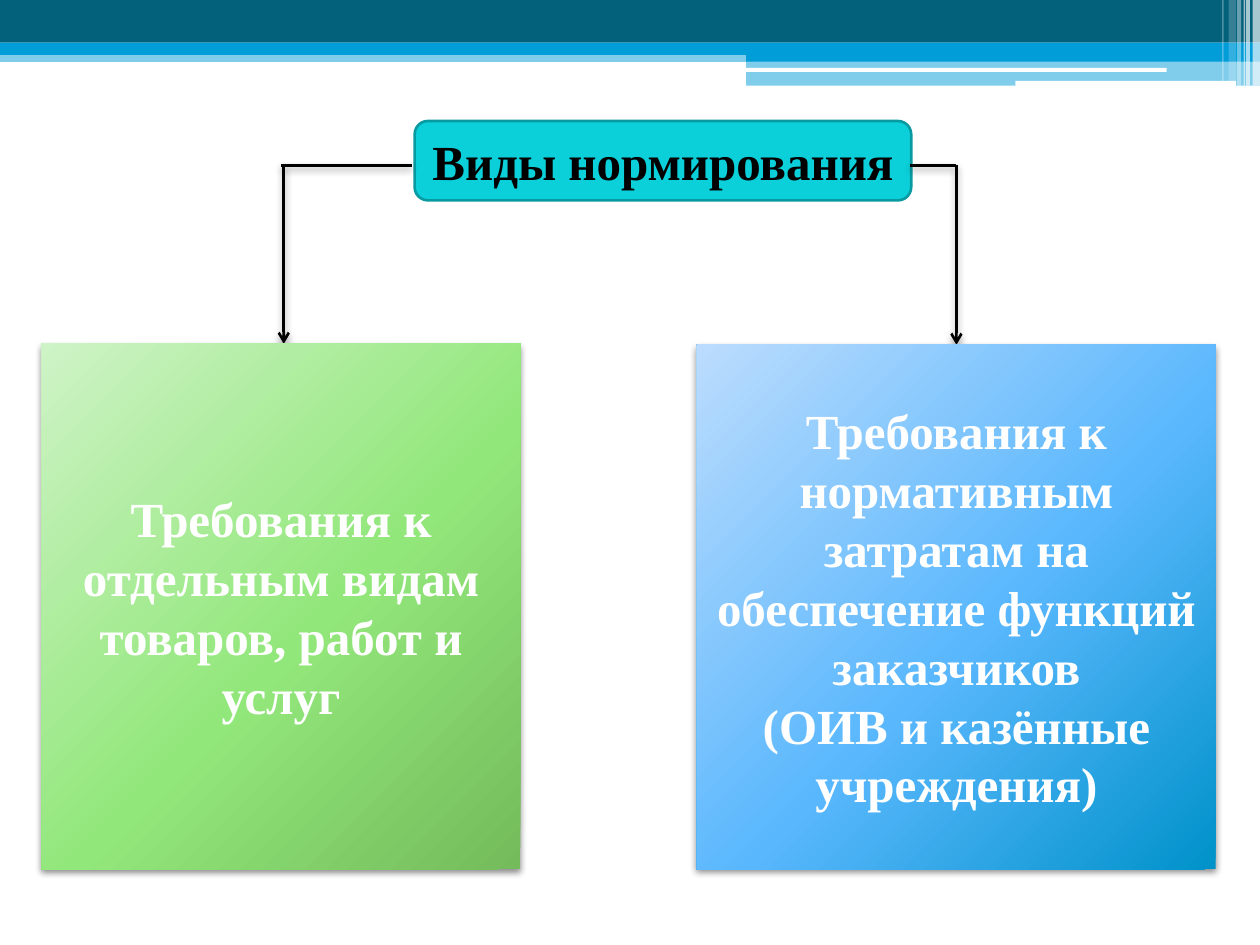
import pptx
import pptx.dml.color
import pptx.enum.shapes
import pptx.enum.text
import pptx.oxml
import pptx.oxml.ns
import pptx.util

Cm = pptx.util.Cm
RGBColor = pptx.dml.color.RGBColor
SHAPES = pptx.enum.shapes.MSO_SHAPE

BLACK = RGBColor(0x00, 0x00, 0x00)
WHITE = RGBColor(0xFF, 0xFF, 0xFF)
DARK_TEAL = RGBColor(0x04, 0x61, 0x7B)
BLUE = RGBColor(0x00, 0x9D, 0xD9)
CYAN = RGBColor(0x0B, 0xD0, 0xD9)
CYAN_EDGE = RGBColor(0x08, 0x9A, 0xA1)
GREENS = (RGBColor(0xCE, 0xF3, 0xC6), RGBColor(0x92, 0xE7, 0x7B), RGBColor(0x74, 0xBC, 0x5B))
BLUES = (RGBColor(0xBB, 0xDC, 0xFD), RGBColor(0x59, 0xB7, 0xFD), RGBColor(0x00, 0x92, 0xCA))
FONT = "Times New Roman"
NAMESPACE = pptx.oxml.ns.nsdecls("a")


def add_box(slide, box, color=None, opacity=100, kind=SHAPES.RECTANGLE):
    """Add a shape without line or shadow, filled when a colour is given."""
    shape = slide.shapes.add_shape(kind, *(Cm(length) for length in box))
    shape.line.fill.background()
    shape.shadow.inherit = False
    if color is not None:
        shape.fill.solid()
        shape.fill.fore_color.rgb = color
        if opacity < 100:
            alpha = pptx.oxml.parse_xml(f'<a:alpha {NAMESPACE} val="{opacity * 1000}"/>')
            shape._element.spPr.find(".//" + pptx.oxml.ns.qn("a:srgbClr")).append(alpha)
    return shape


def set_gradient(shape, colors):
    """Fill a shape with a three-stop circular gradient."""
    stops = "".join(
        f'<a:gs pos="{position * 1000}"><a:srgbClr val="{color}"/></a:gs>'
        for position, color in zip((0, 55, 100), colors)
    )
    gradient = pptx.oxml.parse_xml(
        f'<a:gradFill {NAMESPACE} rotWithShape="1"><a:gsLst>{stops}</a:gsLst>'
        '<a:path path="circle"><a:fillToRect l="-40000" t="-90000" r="140000" b="190000"/>'
        "</a:path></a:gradFill>"
    )
    shape._element.spPr.insert(2, gradient)


def set_shadow(shape, opacity, blur):
    """Give a shape or connector a soft shadow straight below it."""
    properties = shape._element.spPr
    for effects in properties.findall(pptx.oxml.ns.qn("a:effectLst")):
        properties.remove(effects)
    properties.append(pptx.oxml.parse_xml(
        f'<a:effectLst {NAMESPACE}><a:outerShdw blurRad="{pptx.util.Pt(blur)}" '
        f'dist="{pptx.util.Pt(2)}" dir="5400000" rotWithShape="0"><a:srgbClr val="{BLACK}">'
        f'<a:alpha val="{opacity * 1000}"/></a:srgbClr></a:outerShdw></a:effectLst>'
    ))


def set_text(shape, text, size=28, color=WHITE, bold=True, font=FONT):
    """Write centred text, one paragraph for each line."""
    frame = shape.text_frame
    frame.word_wrap = True
    frame.vertical_anchor = pptx.enum.text.MSO_ANCHOR.MIDDLE
    for index, line in enumerate(text.split("\n")):
        paragraph = frame.add_paragraph() if index else frame.paragraphs[0]
        paragraph.alignment = pptx.enum.text.PP_ALIGN.CENTER
        run = paragraph.add_run()
        run.text = line
        run.font.name = font
        run.font.size = pptx.util.Pt(size)
        run.font.bold = bold
        run.font.color.rgb = color


def add_line(slide, start, end, arrow=False):
    """Draw a shadowed black line, optionally with an arrowhead."""
    connector = slide.shapes.add_connector(
        pptx.enum.shapes.MSO_CONNECTOR.STRAIGHT, *(Cm(length) for length in start + end)
    )
    connector.line.color.rgb = BLACK
    connector.line.width = pptx.util.Pt(1.5)
    if arrow:
        connector.line._get_or_add_ln().append(
            pptx.oxml.parse_xml(f'<a:tailEnd {NAMESPACE} type="arrow"/>')
        )
    set_shadow(connector, 40, 4.1)


def add_header(slide, box):
    """Draw the coloured bands, white bars and edge stripes of the header."""
    left, top, width, height = box
    middle = left + 15.04
    right = left + width
    bands = (
        (left, 1.02, width, 0.23, BLUE, 50),
        (left, 0, width, 0.86, DARK_TEAL, 100),
        (left, 0.86, width, 0.25, BLUE, 100),
        (middle, 0.99, right - middle, 0.25, BLUE, 100),
        (middle, 1.22, right - middle, 0.51, BLUE, 50),
    )
    for band_left, offset, band_width, band_height, color, opacity in bands:
        add_box(slide, (band_left, top + offset, band_width, band_height), color, opacity)
    for offset, drop, bar_width, bar_height in ((15.01, 1.37, 8.51, 0.08), (20.47, 1.63, 4.45, 0.1)):
        bar_box = (left + offset, top + drop, bar_width, bar_height)
        add_box(slide, bar_box, WHITE, kind=SHAPES.ROUNDED_RECTANGLE)
    stripes = (
        (0.15, 0.15, height, 65),
        (0.28, 0.08, height, 65),
        (0.33, 0.03, height, 60),
        (0.46, 0.08, height, 40),
        (0.63, 0.15, height - 0.1, 20),
        (0.76, 0.03, height - 0.1, 30),
    )
    for inset, stripe_width, stripe_height, opacity in stripes:
        add_box(slide, (right - inset, top, stripe_width, stripe_height), WHITE, opacity)


def add_title(slide, box, text):
    """Draw the rounded title box."""
    title = add_box(slide, box, CYAN, kind=SHAPES.ROUNDED_RECTANGLE)
    title.line.color.rgb = CYAN_EDGE
    title.line.width = pptx.util.Pt(1.5)
    set_text(title, text, color=BLACK)


def add_branch(slide, box, text, colors, title_edge, elbow, overlap=0.0):
    """Draw a requirement box and the elbow arrow that leads to it."""
    left, top, width, height = box
    level = 3.33
    add_line(slide, (title_edge, level), (elbow - overlap, level))
    add_line(slide, (elbow, level), (elbow, top), arrow=True)
    requirement = add_box(slide, box)
    set_gradient(requirement, colors)
    set_shadow(requirement, 45, 4)
    set_text(requirement, text)


def main():
    """Build and save the slide."""
    presentation = pptx.Presentation()
    presentation.slide_width = Cm(25.4)
    presentation.slide_height = Cm(19.05)
    slide = presentation.slides.add_slide(presentation.slide_layouts[6])
    add_header(slide, (0, 0, 25.4, 1.73))
    add_title(slide, (8.36, 2.44, 10.01, 1.6), "Виды нормирования")
    add_branch(
        slide, (0.84, 6.93, 9.65, 10.59),
        "Требования к отдельным видам товаров, работ и услуг",
        GREENS, title_edge=8.31, elbow=5.72, overlap=0.05,
    )
    add_branch(
        slide, (14.05, 6.95, 10.46, 10.57),
        "Требования к нормативным затратам на обеспечение функций заказчиков\n"
        "(ОИВ и казённые учреждения)",
        BLUES, title_edge=18.34, elbow=19.28,
    )
    presentation.save("out.pptx")


if __name__ == "__main__":
    main()
